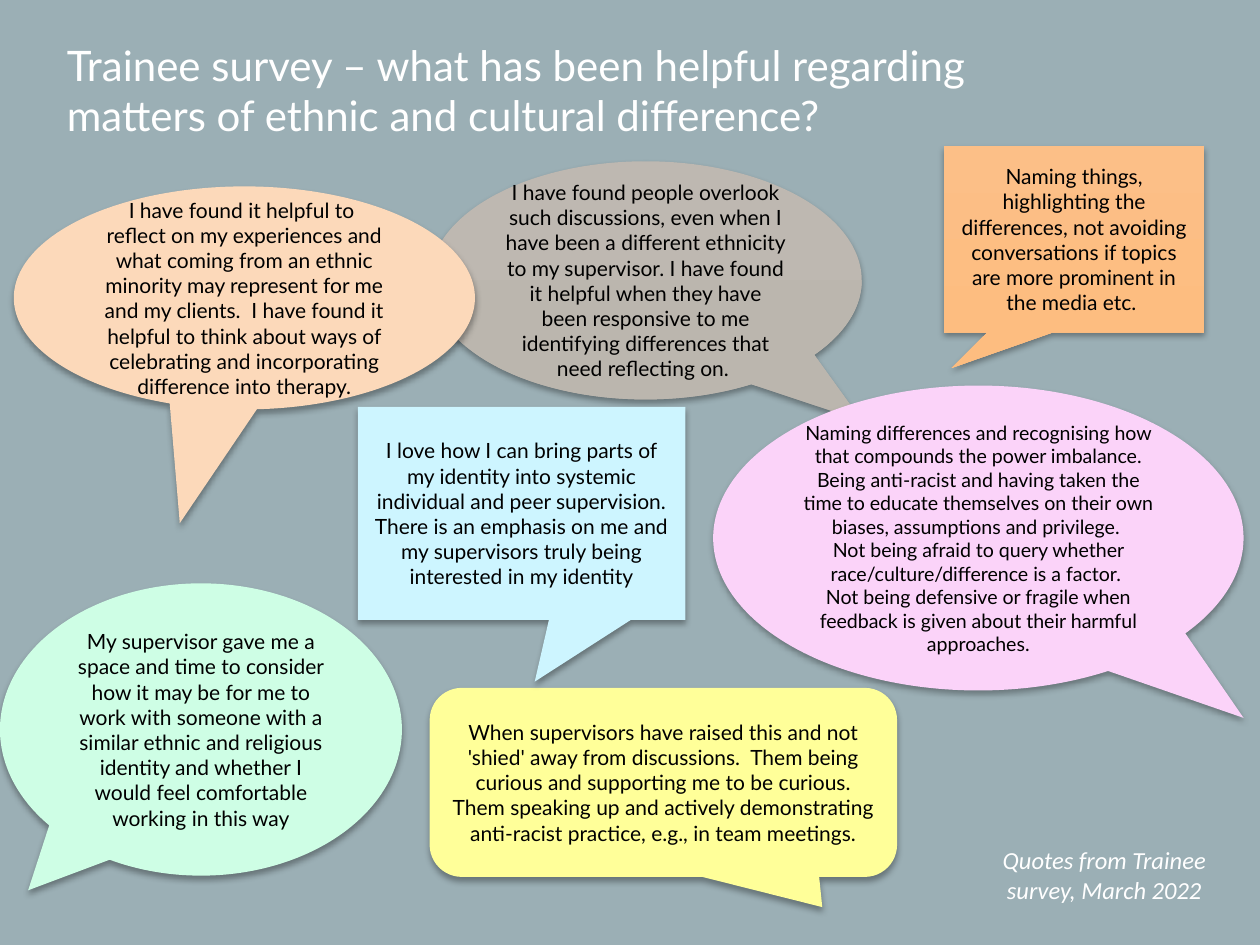
from lxml import etree
from pptx import Presentation
from pptx.dml.color import RGBColor
from pptx.enum.shapes import MSO_SHAPE
from pptx.enum.text import MSO_ANCHOR, PP_ALIGN
from pptx.oxml import parse_xml
from pptx.oxml.ns import nsdecls
from pptx.util import Inches, Pt

OVAL = MSO_SHAPE.OVAL_CALLOUT
RECTANGLE = MSO_SHAPE.RECTANGULAR_CALLOUT
ROUNDED = MSO_SHAPE.ROUNDED_RECTANGULAR_CALLOUT
TOP, MIDDLE = MSO_ANCHOR.TOP, MSO_ANCHOR.MIDDLE
LEFT, CENTER = PP_ALIGN.LEFT, PP_ALIGN.CENTER

CELL = Inches(0.1)
COLUMNS, ROWS = 100, 75
COLORS = {
    "background": "9BAFB5", "white": "FFFFFF", "black": "000000",
    "orange": "FCBF87", "orange_end": "FDBD80",
    "stone": "BEB8B1", "stone_end": "BBB6AE",
    "yellow": "FFFF99", "mint": "CEFEE5", "peach": "FCD9BA",
    "pink": "FBD3F9", "sky": "CDF5FF",
}
TITLE_FORMAT = {"name": "Lato", "size": Pt(24), "bold": False}
QUOTE_FORMAT = {"name": "Lato", "size": Pt(12)}
SMALL_FORMAT = {"name": "Lato", "size": Pt(11.2)}
SOURCE_FORMAT = {"name": "Calibri", "size": Pt(14), "italic": True}

TITLE = ("Trainee survey – what has been helpful regarding matters of ethnic "
         "and cultural difference?")
SOURCE = "Quotes from Trainee survey, March 2022"
BUBBLES = [
    (RECTANGLE, (74.9, 11.6, 20.7, 14.8), (-0.47, 0.69), ("orange", "orange_end"), QUOTE_FORMAT,
     ["Naming things, highlighting the differences, not avoiding conversations if topics "
      "are more prominent in the media etc. "]),
    (OVAL, (34.1, 12.8, 34.3, 18.9), (0.5, 0.59), ("stone", "stone_end"), QUOTE_FORMAT,
     ["I have found people overlook such discussions, even when I have been a different "
      "ethnicity to my supervisor. I have found it helpful when they have been responsive "
      "to me identifying differences that need reflecting on. "]),
    (ROUNDED, (34.1, 54.6, 37.1, 15), (0.34, 0.66, 0.17), ("yellow",), QUOTE_FORMAT,
     ["When supervisors have raised this and not 'shied' away from discussions.  Them being "
      "curious and supporting me to be curious. Them speaking up and actively demonstrating "
      "anti-racist practice, e.g., in team meetings."]),
    (OVAL, (0, 46.3, 31.9, 23.2), (-0.43, 0.55), ("mint",), QUOTE_FORMAT,
     ["My supervisor gave me a space and time to consider how it may be for me to work with "
      "someone with a similar ethnic and religious identity and whether I would feel "
      "comfortable working in this way"]),
    (OVAL, (1.1, 14.8, 36.6, 17.7), (-0.14, 1.01), ("peach",), QUOTE_FORMAT,
     ["I have found it helpful to ",
      "reflect on my experiences and what coming from an ethnic minority may represent for "
      "me and my clients.  I have found it helpful to think about ways of celebrating and "
      "incorporating difference into therapy."]),
    (OVAL, (56.6, 30.6, 42.1, 24.2), (0.5, 0.59), ("pink",), SMALL_FORMAT,
     ["Naming differences and recognising how that compounds the power imbalance. Being "
      "anti-racist and having taken the time to educate themselves on their own biases, "
      "assumptions and privilege. ",
      "Not being afraid to query whether race/culture/difference is a factor. ",
      "Not being defensive or fragile when feedback is given about their harmful approaches."]),
    (RECTANGLE, (28.4, 32.3, 26, 16.9), (0.04, 0.79), ("sky",), QUOTE_FORMAT,
     ["I love how I can bring parts of my identity into systemic individual and peer "
      "supervision. There is an emphasis on me and my supervisors truly being interested "
      "in my identity"]),
]


def color(name):
    """Return the named colour."""
    return RGBColor.from_string(COLORS[name])


def place(box):
    """Turn grid columns and rows into slide lengths."""
    return [round(cells * CELL) for cells in box]


def write(shape, texts, font_format, ink, align, anchor):
    """Fill a shape with formatted paragraphs."""
    frame = shape.text_frame
    frame.word_wrap = True
    frame.vertical_anchor = anchor
    frame.text = "\n".join(texts)
    for para in frame.paragraphs:
        para.alignment = align
        for span in para.runs:
            span.font.color.rgb = color(ink)
            for key, value in font_format.items():
                setattr(span.font, key, value)


def paint(shape, names):
    """Give a shape a plain fill, or a vertical gradient for two colours."""
    if len(names) == 1:
        shape.fill.solid()
        shape.fill.fore_color.rgb = color(names[0])
        return
    shape.fill.gradient()
    shape.fill.gradient_angle = 270
    for stop, name, position in zip(shape.fill.gradient_stops, names, (0, 1)):
        stop.color.rgb = color(name)
        stop.position = position


def cast_shadow(shape):
    """Add a soft shadow below a shape."""
    shape.shadow.inherit = False
    effects = shape.element.spPr.find("{*}effectLst")
    shadow = parse_xml(
        f'<a:outerShdw {nsdecls("a")} blurRad="{Pt(3.5)}" dist="{Pt(2.2)}" '
        'dir="5400000" rotWithShape="0"/>')
    ink = etree.SubElement(shadow, "{%s}srgbClr" % shadow.nsmap["a"], val=COLORS["black"])
    etree.SubElement(ink, "{%s}alpha" % shadow.nsmap["a"], val="32000")
    effects.append(shadow)


def add_title(page, box):
    """Place the slide title."""
    title = page.shapes.title
    title.left, title.top, title.width, title.height = place(box)
    write(title, [TITLE], TITLE_FORMAT, "white", LEFT, TOP)


def add_bubble(page, kind, box, tail, fills, font_format, texts):
    """Place one quote in a speech bubble."""
    bubble = page.shapes.add_shape(kind, *place(box))
    for index, value in enumerate(tail):
        bubble.adjustments[index] = value
    paint(bubble, fills)
    bubble.line.fill.background()
    cast_shadow(bubble)
    write(bubble, texts, font_format, "black", CENTER, MIDDLE)


def add_source(page, box):
    """Place the source of the quotes."""
    note = page.shapes.add_textbox(*place(box))
    write(note, [SOURCE], SOURCE_FORMAT, "white", CENTER, TOP)


def main():
    """Build and save the slide."""
    deck = Presentation()
    deck.slide_width, deck.slide_height = place((COLUMNS, ROWS))
    page = deck.slides.add_slide(deck.slide_layouts[5])
    page.background.fill.solid()
    page.background.fill.fore_color.rgb = color("background")
    add_title(page, (4.3, 2.6, 83.3, 9.1))
    for bubble in BUBBLES:
        add_bubble(page, *bubble)
    add_source(page, (77.3, 66.6, 20.7, 5.7))
    deck.save("out.pptx")


if __name__ == "__main__":
    main()
